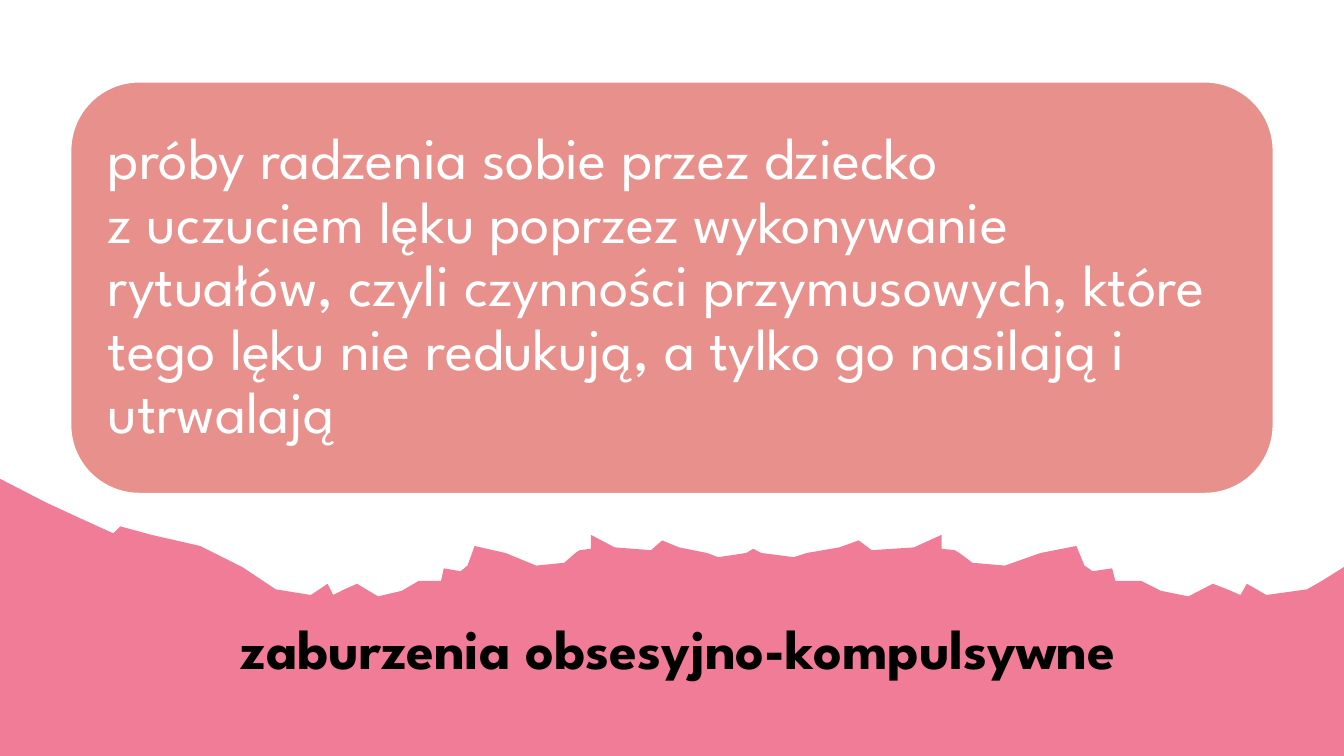
from dataclasses import dataclass

from pptx import Presentation
from pptx.dml.color import RGBColor as RGB
from pptx.enum.shapes import MSO_SHAPE as Shape
from pptx.enum.text import MSO_ANCHOR as Anchor, MSO_AUTO_SIZE as Auto, PP_ALIGN as Align
from pptx.util import Pt


@dataclass(frozen=True)
class Theme:
    font: str = "League Spartan"
    pink: RGB = RGB(0xF0, 0x7C, 0x98)
    coral: RGB = RGB(0xE8, 0x90, 0x8B)
    white: RGB = RGB(0xFF, 0xFF, 0xFF)
    black: RGB = RGB(0, 0, 0)
    title: int = 40
    body: int = 42


THEME = Theme()
WIDE, HIGH = 960, 540

TITLE = "zaburzenia obsesyjno-kompulsywne"
LINES = [
    "próby radzenia sobie przez dziecko",
    "z uczuciem lęku poprzez wykonywanie rytuałów, czyli czynności "
    "przymusowych, które tego lęku nie redukują, a tylko go nasilają i utrwalają",
]

# The torn edge: a slope, then a ragged half that is mirrored about MID
# and stretched to reach the right side of the slide
MID, STRETCH = 538, 1.16
SLOPE = [(0, 342), (33, 359), (59, 371), (81, 381), (86, 376), (108, 382), (143, 390)]
HALF = [
    (173, 405), (188, 415), (197, 421), (222, 425), (234, 417), (238, 425),
    (246, 421), (255, 417), (270, 426), (287, 422), (299, 415), (315, 415),
    (317, 406), (329, 408), (334, 404), (339, 390), (361, 395), (383, 404),
    (403, 402), (411, 395), (414, 393), (422, 392), (422, 382), (439, 391),
    (465, 393), (473, 386), (485, 391), (505, 395), (513, 398), (533, 395),
]


def paint(shape, fill):
    shape.shadow.inherit = False
    shape.fill.solid()
    shape.fill.fore_color.rgb = fill


def write(shape, lines, size, color, align, bold=False):
    """Fill a shape with one paragraph, with a line break between the lines."""
    frame = shape.text_frame
    frame.word_wrap = True
    frame.auto_size = Auto.NONE
    frame.vertical_anchor = Anchor.MIDDLE
    para = frame.paragraphs[0]
    para.alignment = align
    para.line_spacing = 0.9
    for i, line in enumerate(lines):
        if i:
            para.add_line_break()
        para.add_run().text = line
    font = para.font
    font.name, font.size, font.bold = THEME.font, Pt(size), bold
    font.color.rgb = color


def add_band(slide):
    flip = [(min(WIDE, MID + STRETCH * (MID - x)), y) for x, y in reversed(HALF)]
    edge = SLOPE + HALF + [(MID, 392)] + flip + [(WIDE, HIGH), (0, HIGH)]
    start, *rest = [(Pt(x), Pt(y)) for x, y in edge]
    pen = slide.shapes.build_freeform(*start)
    pen.add_line_segments(rest, close=True)
    band = pen.convert_to_shape()
    paint(band, THEME.pink)
    band.line.fill.background()


def add_card(slide):
    card = slide.shapes.add_shape(
        Shape.ROUNDED_RECTANGLE, Pt(50.5), Pt(58.5), Pt(859), Pt(294))
    paint(card, THEME.coral)
    card.line.color.rgb = THEME.white
    card.line.width = Pt(1)
    frame = card.text_frame
    frame.margin_left = frame.margin_right = Pt(12.25)
    frame.margin_top = frame.margin_bottom = Pt(12.25)
    write(card, LINES, THEME.body, THEME.white, Align.LEFT)


def set_title(slide):
    title = slide.shapes.title
    title.left, title.top, title.width, title.height = map(Pt, (70.5, 430.5, 828, 70))
    write(title, [TITLE], THEME.title, THEME.black, Align.CENTER, bold=True)
    # Bring the title in front of the band
    title.element.getparent().append(title.element)


def main():
    deck = Presentation()
    deck.slide_width, deck.slide_height = Pt(WIDE), Pt(HIGH)
    slide = deck.slides.add_slide(deck.slide_layouts.get_by_name("Title Only"))
    add_band(slide)
    set_title(slide)
    add_card(slide)
    deck.save("out.pptx")


if __name__ == "__main__":
    main()
